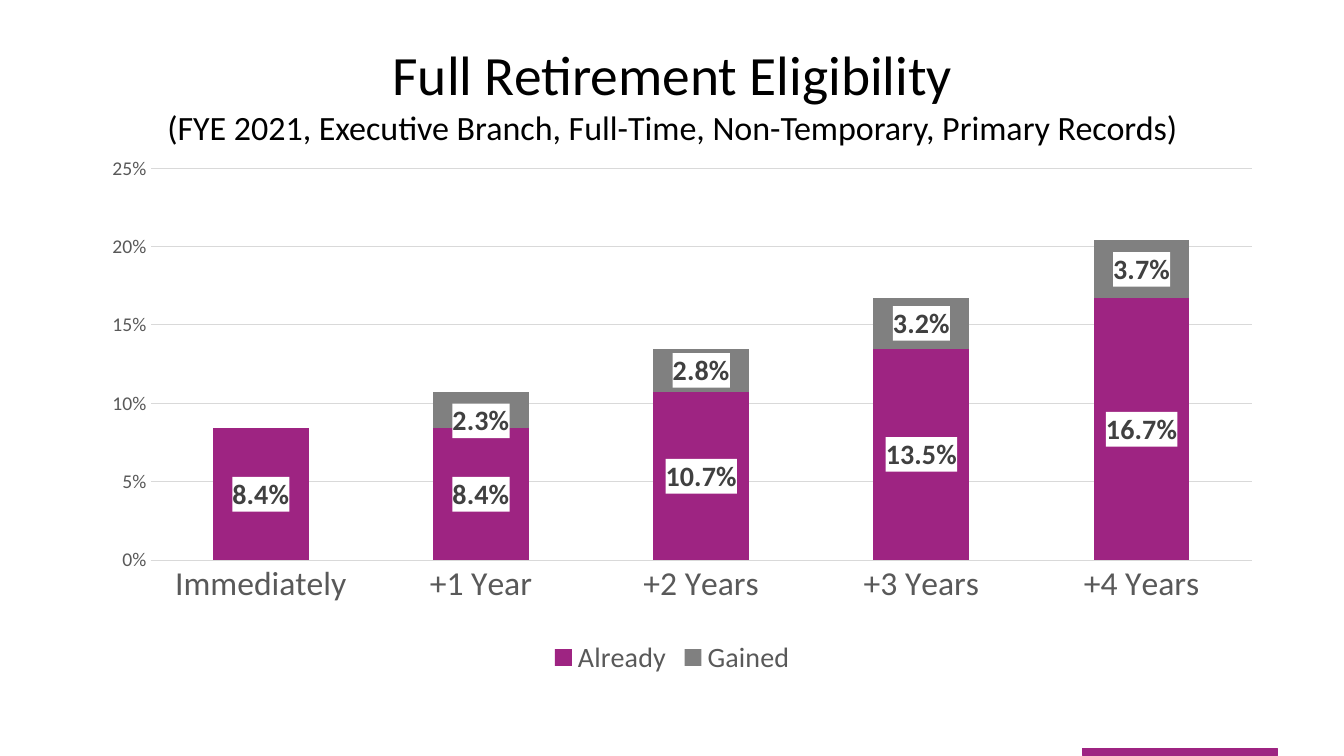
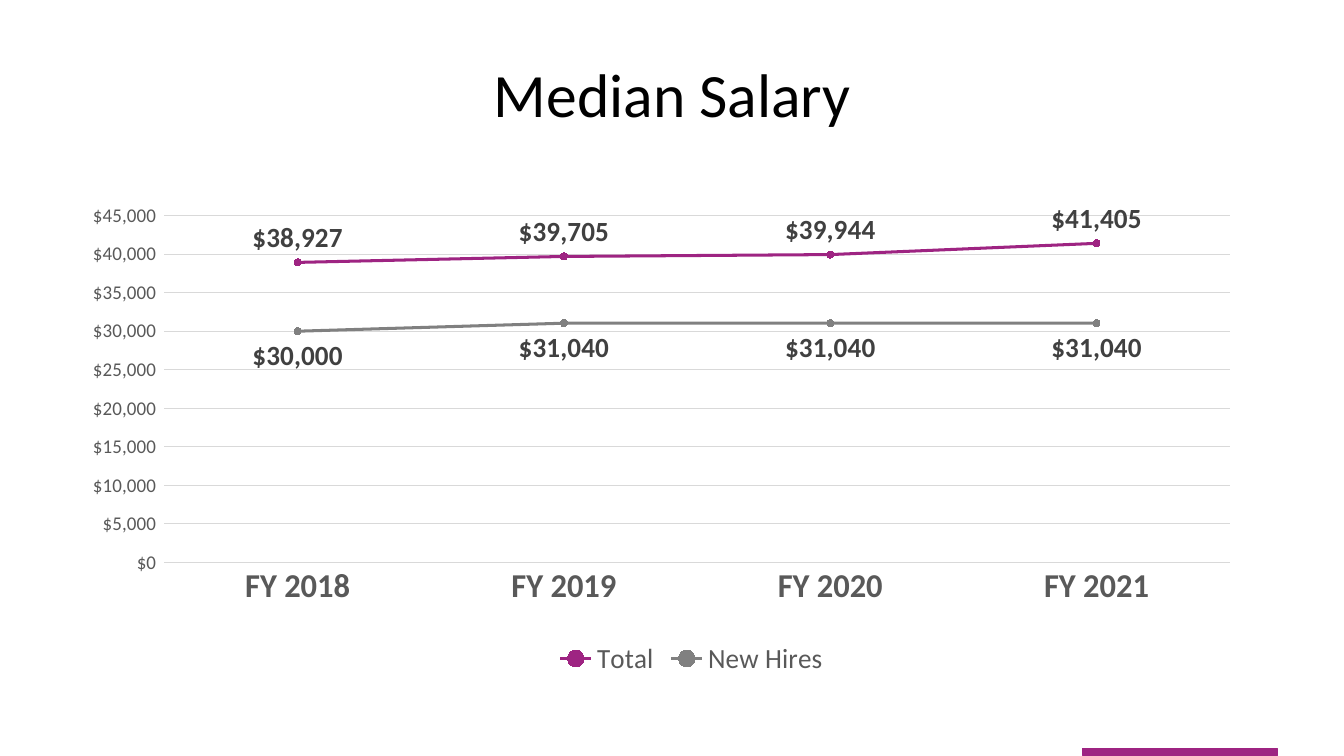
"""Build two workforce slides: retirement eligibility and median salary."""
from copy import deepcopy

from lxml import etree
from pptx import Presentation
from pptx.chart.data import CategoryChartData
from pptx.dml.color import RGBColor
from pptx.enum.chart import (XL_CHART_TYPE, XL_LABEL_POSITION, XL_LEGEND_POSITION,
                             XL_MARKER_STYLE, XL_TICK_MARK)
from pptx.enum.shapes import MSO_SHAPE
from pptx.enum.text import MSO_ANCHOR, MSO_AUTO_SIZE, PP_ALIGN
from pptx.oxml import parse_xml
from pptx.oxml.ns import nsdecls, qn
from pptx.util import Inches, Pt

STACKED = XL_CHART_TYPE.COLUMN_STACKED
LINES = XL_CHART_TYPE.LINE_MARKERS
ABOVE, BELOW, CENTER = (XL_LABEL_POSITION.ABOVE, XL_LABEL_POSITION.BELOW,
                        XL_LABEL_POSITION.CENTER)
LEGEND_BOTTOM = XL_LEGEND_POSITION.BOTTOM
CIRCLE = XL_MARKER_STYLE.CIRCLE
NO_TICK = XL_TICK_MARK.NONE
RECTANGLE = MSO_SHAPE.RECTANGLE
MIDDLE = MSO_ANCHOR.MIDDLE
NO_AUTOFIT = MSO_AUTO_SIZE.NONE
ALIGN_CENTER = PP_ALIGN.CENTER

FONT = "Calibri"
COLORS = {"accent": "9E2482", "gray": "808080", "title": "000000",
          "axis": "595959", "label": "404040", "grid": "D9D9D9"}
SERIES_COLORS = ("accent", "gray")
TITLE_ONLY = 5


def rgb(name):
    """Return the palette colour called name."""
    return RGBColor.from_string(COLORS[name])


def style_font(font, size, color, bold=False):
    """Apply the deck's typeface with a size, colour and weight."""
    font.name = FONT
    font.size = Pt(size)
    font.bold = bold
    font.color.rgb = rgb(color)


def style_line(line, color, width=0.75):
    """Give a line a solid colour and width."""
    line.color.rgb = rgb(color)
    line.width = Pt(width)


def write_text(para, text, size, color="title", bold=False):
    """Add a formatted run to a paragraph and return it."""
    span = para.add_run()
    span.text = text
    style_font(span.font, size, color, bold)
    return span


def add_page(deck, title, size, subtitle=None, subtitle_size=24.3):
    """Add a slide with its centred title and the bottom accent band."""
    page = deck.slides.add_slide(deck.slide_layouts[TITLE_ONLY])
    box = page.shapes.title
    box.left, box.top = Inches(0.67), Inches(0.3)
    box.width, box.height = Inches(12), Inches(1.25)
    frame = box.text_frame
    frame.auto_size = NO_AUTOFIT
    frame.vertical_anchor = MIDDLE
    para = frame.paragraphs[0]
    para.alignment = ALIGN_CENTER
    span = write_text(para, title, size)
    if subtitle:
        para.add_line_break()
        para._p.find(qn("a:br")).append(deepcopy(span._r.rPr))
        write_text(para, subtitle, subtitle_size)

    band = page.shapes.add_shape(RECTANGLE, Inches(10.74), Inches(7.43),
                                 Inches(1.93), Inches(0.07))
    band.shadow.inherit = False
    band.fill.solid()
    band.fill.fore_color.rgb = rgb("accent")
    style_line(band.line, "accent")
    return page


def manual_layout(**values):
    """Return a chart layout element holding the given settings."""
    layout = parse_xml(f"<c:layout {nsdecls('c')}><c:manualLayout/></c:layout>")
    for name, value in values.items():
        etree.SubElement(layout[0], qn(f"c:{name}"), val=str(value))
    return layout


def place_plot(chart, left, top, width, height):
    """Set the inner plot area as fractions of the chart."""
    area = chart._chartSpace.chart.plotArea
    for layout in area.findall(qn("c:layout")):
        area.remove(layout)
    area.insert(0, manual_layout(layoutTarget="inner", xMode="edge", yMode="edge",
                                 x=left, y=top, w=width, h=height))


def style_axes(chart, top_value, step, number_format, bold_categories):
    """Format both axes and the horizontal grid."""
    categories, values = chart.category_axis, chart.value_axis
    for axis in (categories, values):
        axis.major_tick_mark = axis.minor_tick_mark = NO_TICK
    style_font(categories.tick_labels.font, 24, "axis", bold_categories)
    style_line(categories.format.line, "grid")
    style_font(values.tick_labels.font, 14, "axis")
    values.tick_labels.number_format = number_format
    values.tick_labels.number_format_is_linked = False
    values.minimum_scale, values.maximum_scale = 0, top_value
    values.major_unit = step
    values.format.line.fill.background()
    values.has_major_gridlines = True
    style_line(values.major_gridlines.format.line, "grid")


def add_labels(series, number_format, position):
    """Show bold value labels on a series."""
    labels = series.data_labels
    labels.show_value = True
    labels.number_format = number_format
    labels.number_format_is_linked = False
    labels.position = position
    style_font(labels.font, 20, "label", True)


def whiten_labels(series):
    """Put a white background behind the labels of a series."""
    series._element.find(qn("c:dLbls")).find(qn("c:numFmt")).addnext(parse_xml(
        f"<c:spPr {nsdecls('c', 'a')}><a:solidFill><a:srgbClr val='FFFFFF'/>"
        "</a:solidFill></c:spPr>"))


def lower_label(series, index, offset):
    """Move one label down by a fraction of the chart height."""
    labels = series._element.find(qn("c:dLbls"))
    label = parse_xml(f"<c:dLbl {nsdecls('c')}><c:idx val='{index}'/></c:dLbl>")
    label.append(manual_layout(x=0, y=offset))
    for part in labels:
        if part.tag != qn("c:showLeaderLines"):
            label.append(deepcopy(part))
    labels.insert(0, label)


def add_chart(page, kind, top, height, categories, series, plot_area, axis_format,
              top_value, step, bold_categories=False):
    """Add a chart with the deck's legend, axes and fonts."""
    data = CategoryChartData()
    data.categories = categories
    for name, values in series.items():
        data.add_series(name, values)
    chart = page.shapes.add_chart(kind, Inches(0.92), Inches(top), Inches(11.5),
                                  Inches(height), data).chart
    style_font(chart.font, 10, "title")
    chart.has_title = False
    chart.has_legend = True
    chart.legend.position = LEGEND_BOTTOM
    chart.legend.include_in_layout = False
    style_font(chart.legend.font, 20, "axis")
    chart.plots[0].vary_by_categories = False
    style_axes(chart, top_value, step, axis_format, bold_categories)
    place_plot(chart, *plot_area)
    return chart


def add_retirement_page(deck):
    """Add the stacked column slide on retirement eligibility."""
    page = add_page(
        deck, "Full Retirement Eligibility", 39.6,
        "(FYE 2021, Executive Branch, Full-Time, Non-Temporary, Primary Records)")
    chart = add_chart(
        page, STACKED, 1.55, 5.2,
        ["Immediately", "+1 Year", "+2 Years", "+3 Years", "+4 Years"],
        {"Already": [0.084, 0.084, 0.107, 0.135, 0.167],
         "Gained": [None, 0.023, 0.028, 0.032, 0.037]},
        (0.05, 0.02, 0.95, 0.75), "0%", 0.25, 0.05)
    plot = chart.plots[0]
    plot.gap_width, plot.overlap = 130, 100
    for series, color in zip(plot.series, SERIES_COLORS):
        series.format.fill.solid()
        series.format.fill.fore_color.rgb = rgb(color)
        add_labels(series, "0.0%", CENTER)
        whiten_labels(series)
    lower_label(plot.series[1], 1, 0.02)


def add_salary_page(deck):
    """Add the line chart slide on median salary."""
    page = add_page(deck, "Median Salary", 44)
    chart = add_chart(
        page, LINES, 2, 4.76, [f"FY {year}" for year in range(2018, 2022)],
        {"Total": [38927, 39705, 39944, 41405],
         "New Hires": [30000, 31040, 31040, 31040]},
        (0.03, 0.02, 0.95, 0.73), r'"$"#,##0_);[Red]\("$"#,##0\)', 45000, 5000,
        bold_categories=True)
    for series, color, position in zip(chart.plots[0].series, SERIES_COLORS,
                                       (ABOVE, BELOW)):
        series.smooth = False
        style_line(series.format.line, color, 2.25)
        marker = series.marker
        marker.style, marker.size = CIRCLE, 5
        marker.format.fill.solid()
        marker.format.fill.fore_color.rgb = rgb(color)
        style_line(marker.format.line, color)
        add_labels(series, '"$"#,##0', position)


def main():
    """Build and save the deck."""
    deck = Presentation()
    deck.slide_width, deck.slide_height = Inches(13.33), Inches(7.5)
    add_retirement_page(deck)
    add_salary_page(deck)
    deck.save("out.pptx")


if __name__ == "__main__":
    main()
